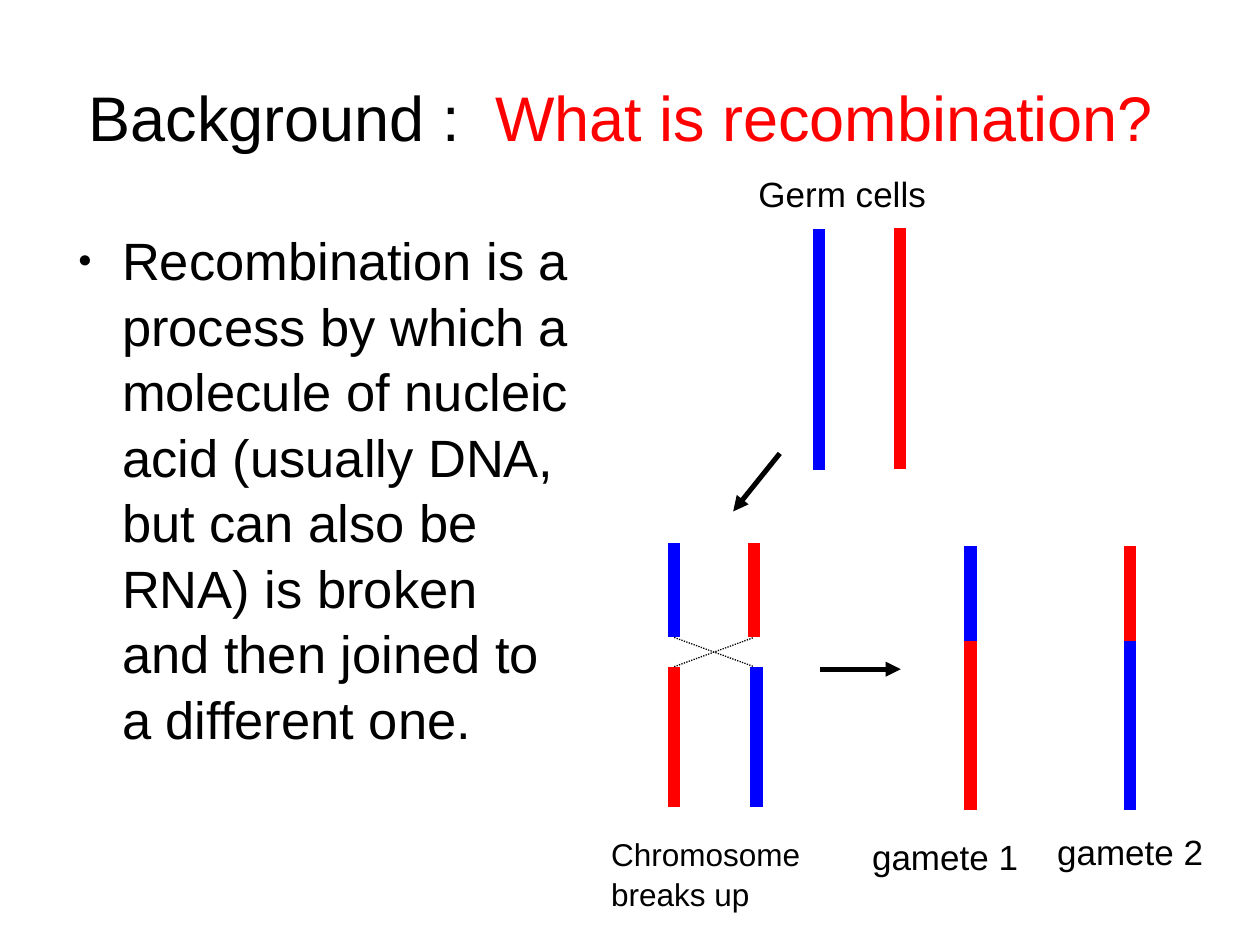
from lxml.etree import SubElement
from pptx import Presentation
from pptx.dml.color import RGBColor
from pptx.enum.dml import MSO_LINE
from pptx.enum.shapes import MSO_CONNECTOR
from pptx.enum.text import MSO_ANCHOR, MSO_AUTO_SIZE, PP_ALIGN
from pptx.oxml.ns import qn
from pptx.util import Cm, Pt

COLOURS = {"ink": "000000", "blue": "0000FF", "red": "FF0000"}


class SlideBuilder:
    """Holds the style and the slide being filled; positions are in cm."""

    font = "Arial"
    line_spacing = 1.04
    bar_width = 7.2
    arrow_width = 2.89
    strand_width = 0.75

    def __init__(self, slide):
        self.slide = slide

    def colour(self, name):
        return RGBColor.from_string(COLOURS[name])

    def style_span(self, span, size, colour="ink"):
        span.font.name = self.font
        span.font.size = Pt(size)
        span.font.color.rgb = self.colour(colour)

    def place(self, box, left, top, width, height, insets, anchor):
        """Set the box's position, insets (left, top, right, bottom) and wrapping."""
        box.left, box.top, box.width, box.height = map(Cm, (left, top, width, height))
        frame = box.text_frame
        frame.word_wrap = True
        frame.auto_size = MSO_AUTO_SIZE.NONE
        frame.vertical_anchor = anchor
        (frame.margin_left, frame.margin_top,
         frame.margin_right, frame.margin_bottom) = map(Cm, insets)
        return frame

    def title(self, parts, area, size):
        frame = self.place(self.slide.shapes.title, *area, (0, 0.1, 0, 0), MSO_ANCHOR.MIDDLE)
        para = frame.paragraphs[0]
        para.alignment = PP_ALIGN.CENTER
        for text, colour in parts:
            span = para.add_run()
            span.text = text
            self.style_span(span, size, colour)

    def bullet(self, text, area, size):
        body = self.slide.placeholders[1]
        frame = self.place(body, *area, (0, 0.08, 0, 0), MSO_ANCHOR.TOP)
        frame.text = text
        para = frame.paragraphs[0]
        properties = para._p.get_or_add_pPr()
        properties.set("marL", str(Cm(1.19)))
        properties.set("indent", str(Cm(-0.89)))
        SubElement(properties, qn("a:buSzPct"), val="45000")
        SubElement(properties, qn("a:buChar"), char="●")
        para.space_before = Pt(0)
        para.space_after = Pt(12.9)
        para.line_spacing = self.line_spacing
        self.style_span(para.runs[0], size)

    def label(self, text, area, size=20):
        box = self.slide.shapes.add_textbox(0, 0, 0, 0)
        frame = self.place(box, *area, (0.23, 0.1, 0.23, 0.1), MSO_ANCHOR.TOP)
        frame.text = text
        para = frame.paragraphs[0]
        para.line_spacing = self.line_spacing
        self.style_span(para.runs[0], size)

    def line(self, start, end, colour, width):
        line = self.slide.shapes.add_connector(
            MSO_CONNECTOR.STRAIGHT, *map(Cm, (*start, *end)))
        line.line.color.rgb = self.colour(colour)
        line.line.width = Pt(width)
        SubElement(line._element.spPr, qn("a:effectLst"))
        return line

    def chromosome(self, x, top, bottom, colour):
        self.line((x, top), (x, bottom), colour, self.bar_width)

    def arrow(self, start, end):
        arrow = self.line(start, end, "ink", self.arrow_width)
        SubElement(arrow.line._get_or_add_ln(), qn("a:tailEnd"), type="triangle")

    def strand(self, start, end):
        strand = self.line(start, end, "ink", self.strand_width)
        strand.line.dash_style = MSO_LINE.ROUND_DOT


def main():
    deck = Presentation()
    deck.slide_width, deck.slide_height = Cm(25.4), Cm(19.05)
    builder = SlideBuilder(deck.slides.add_slide(deck.slide_layouts[1]))

    builder.title([("Background :  ", "ink"), ("What is recombination?", "red")],
                  (1.09, 0.71, 22.86, 3.18), 36)
    builder.bullet("Recombination is a process by which a molecule of nucleic acid "
                   "(usually DNA, but can also be RNA) is broken and then joined "
                   "to a different one.", (1.27, 4.47, 10.24, 12.24), 30)

    # Germ cells: two whole chromosomes
    builder.chromosome(16.51, 4.62, 9.47, "blue")
    builder.chromosome(18.14, 4.6, 9.45, "red")

    # Broken pair: the lower parts have changed places
    left, right = 13.59, 15.2
    break_top, break_bottom = 12.85, 13.44
    for x, upper, lower in ((left, "blue", "red"), (right, "red", "blue")):
        builder.chromosome(x, 10.95, break_top, upper)
        builder.chromosome(x + (0.05 if x == right else 0), break_bottom, 16.26, lower)
    builder.strand((left, break_bottom), (right, break_top))
    builder.strand((left, break_top), (right, break_bottom))

    # Gametes: the parts joined again
    for x, upper, lower in ((19.56, "blue", "red"), (22.78, "red", "blue")):
        builder.chromosome(x, 11.01, 12.92, upper)
        builder.chromosome(x, 12.92, 16.33, lower)

    builder.arrow((15.72, 9.14), (14.78, 10.31))
    builder.arrow((16.54, 13.49), (18.16, 13.49))

    builder.label("gamete 1", (17.35, 16.71, 3.51, 0.53))
    builder.label("gamete 2", (21.08, 16.61, 3.51, 0.86))
    builder.label("Chromosome breaks up", (12.09, 16.71, 4.85, 1.5), 18)
    builder.label("Germ cells", (15.06, 3.35, 4.11, 0.86))

    deck.save("out.pptx")


if __name__ == "__main__":
    main()
